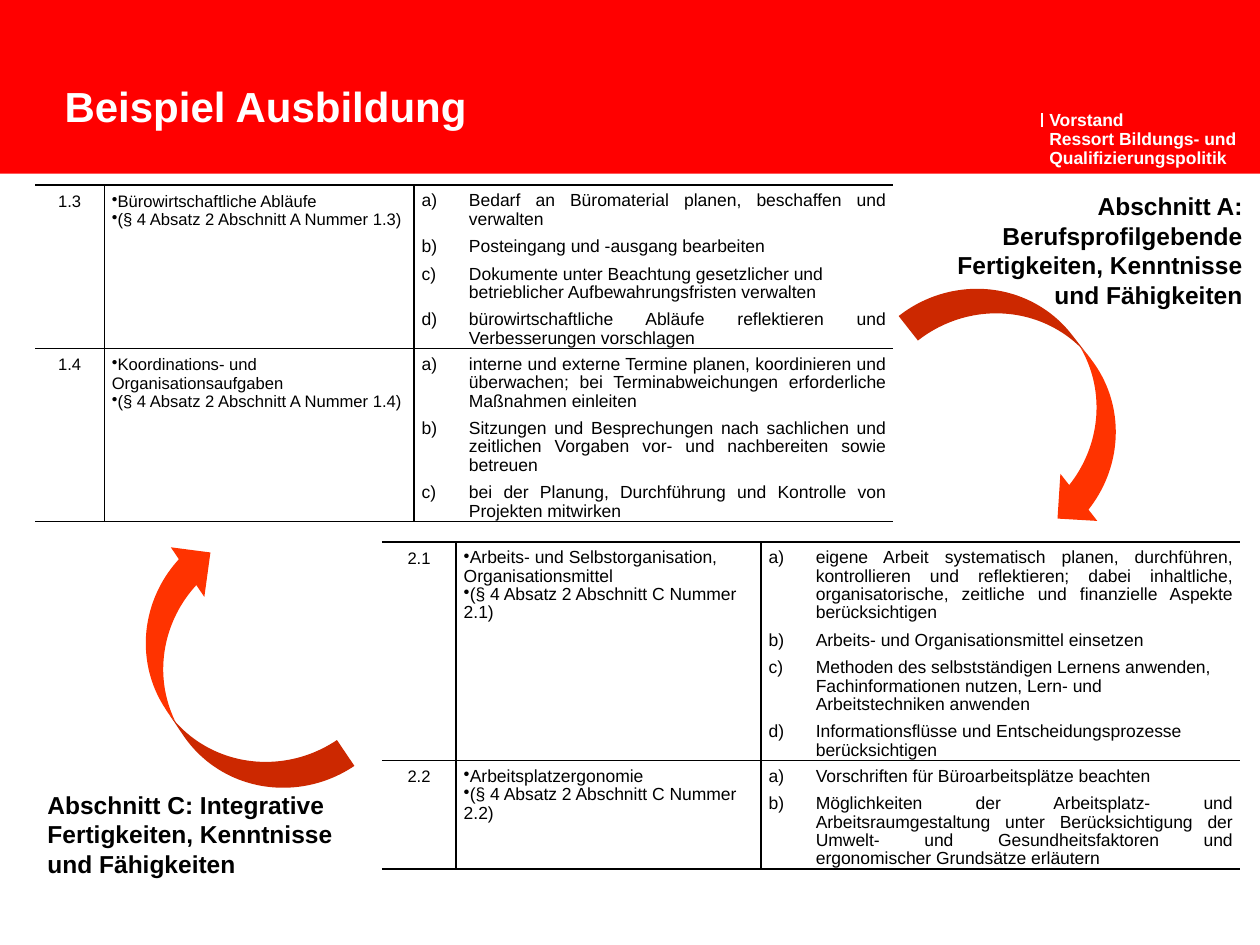
from lxml.etree import SubElement
from pptx import Presentation
from pptx.dml.color import RGBColor
from pptx.enum.shapes import MSO_CONNECTOR, MSO_SHAPE
from pptx.enum.text import PP_ALIGN
from pptx.oxml.ns import qn
from pptx.util import Pt

RED = RGBColor(0xFF, 0x00, 0x00)
ORANGE = RGBColor(0xFF, 0x33, 0x00)
WHITE = RGBColor(0xFF, 0xFF, 0xFF)
BLACK = RGBColor(0x00, 0x00, 0x00)
FONT = "Arial"
LEFT, CENTER, JUSTIFY = PP_ALIGN.LEFT, PP_ALIGN.CENTER, PP_ALIGN.JUSTIFY

SECTION_A = [
    ("1.3", ["Bürowirtschaftliche Abläufe", "(§ 4 Absatz 2 Abschnitt A Nummer 1.3)"], [
        (JUSTIFY, "Bedarf an Büromaterial planen, beschaffen und verwalten"),
        (JUSTIFY, "Posteingang und -ausgang bearbeiten"),
        (LEFT, "Dokumente unter Beachtung gesetzlicher und betrieblicher "
               "Aufbewahrungsfristen verwalten"),
        (JUSTIFY, "bürowirtschaftliche Abläufe reflektieren und Verbesserungen vorschlagen"),
    ]),
    ("1.4", ["Koordinations- und Organisationsaufgaben",
             "(§ 4 Absatz 2 Abschnitt A Nummer 1.4)"], [
        (JUSTIFY, "interne und externe Termine planen, koordinieren und überwachen; "
                  "bei Terminabweichungen erforderliche Maßnahmen einleiten"),
        (JUSTIFY, "Sitzungen und Besprechungen nach sachlichen und zeitlichen Vorgaben "
                  "vor- und nachbereiten sowie betreuen"),
        (JUSTIFY, "bei der Planung, Durchführung und Kontrolle von Projekten mitwirken"),
    ]),
]
SECTION_C = [
    ("2.1", ["Arbeits- und Selbstorganisation, Organisationsmittel",
             "(§ 4 Absatz 2 Abschnitt C Nummer 2.1)"], [
        (JUSTIFY, "eigene Arbeit systematisch planen, durchführen, kontrollieren und "
                  "reflektieren; dabei inhaltliche, organisatorische, zeitliche und "
                  "finanzielle Aspekte berücksichtigen"),
        (JUSTIFY, "Arbeits- und Organisationsmittel einsetzen"),
        (LEFT, "Methoden des selbstständigen Lernens anwenden, Fachinformationen nutzen, "
               "Lern- und Arbeitstechniken anwenden"),
        (LEFT, "Informationsflüsse und Entscheidungsprozesse berücksichtigen"),
    ]),
    ("2.2", ["Arbeitsplatzergonomie", "(§ 4 Absatz 2 Abschnitt C Nummer 2.2)"], [
        (JUSTIFY, "Vorschriften für Büroarbeitsplätze beachten"),
        (JUSTIFY, "Möglichkeiten der Arbeitsplatz- und Arbeitsraumgestaltung unter "
                  "Berücksichtigung der Umwelt- und Gesundheitsfaktoren und ergonomischer "
                  "Grundsätze erläutern"),
    ]),
]


def add_run(paragraph, text, size, color=BLACK, bold=False):
    run = paragraph.add_run()
    run.text = text
    run.font.name = FONT
    run.font.size = Pt(size)
    run.font.bold = bold
    run.font.color.rgb = color


def next_paragraph(frame, index):
    return frame.paragraphs[0] if index == 0 else frame.add_paragraph()


def add_bold_text(slide, box, lines, size, color, align=LEFT, inset=(0, 0), spacing=None):
    frame = slide.shapes.add_textbox(*map(Pt, box)).text_frame
    frame.word_wrap = True
    frame.margin_left = frame.margin_right = Pt(inset[0])
    frame.margin_top = frame.margin_bottom = Pt(inset[1])
    for index, line in enumerate(lines):
        paragraph = next_paragraph(frame, index)
        paragraph.alignment = align
        if spacing:
            paragraph.line_spacing = Pt(spacing)
        add_run(paragraph, line, size, color, bold=True)


def add_header(slide, box):
    left, top, width, height = box
    band = slide.shapes.add_shape(MSO_SHAPE.RECTANGLE, *map(Pt, box))
    band.shadow.inherit = False
    band.fill.solid()
    band.fill.fore_color.rgb = RED
    band.line.fill.background()

    rule_x = left + width - 124.6
    rule = slide.shapes.add_connector(
        MSO_CONNECTOR.STRAIGHT, Pt(rule_x), Pt(top + 64.8), Pt(rule_x), Pt(top + 72.7))
    rule.line.color.rgb = WHITE
    rule.line.width = Pt(0.8)
    SubElement(rule._element.spPr, qn("a:effectLst"))

    add_bold_text(slide, (left + width - 120.4, top + 63.2, 120.4, 33),
                  ["Vorstand", "Ressort Bildungs- und", "Qualifizierungspolitik"],
                  10, WHITE, spacing=11)
    add_bold_text(slide, (left + 36.9, top + 49, 662, 26),
                  ["Beispiel Ausbildung"], 24, WHITE, spacing=26)


def set_borders(cell, visible_sides):
    properties = cell._tc.get_or_add_tcPr()
    for side in "LRTB":
        border = SubElement(properties, qn(f"a:ln{side}"), w=str(Pt(1)))
        if side in visible_sides:
            fill = SubElement(border, qn("a:solidFill"))
            SubElement(fill, qn("a:srgbClr"), val=str(BLACK))
        else:
            SubElement(border, qn("a:noFill"))
    cell.fill.background()


def fill_cell(cell, entries, size, marker=None, hanging=0, after=0):
    cell.margin_left = cell.margin_right = cell.margin_top = Pt(4.3)
    cell.margin_bottom = Pt(0)
    for index, (align, text) in enumerate(entries):
        paragraph = next_paragraph(cell.text_frame, index)
        properties = paragraph._p.get_or_add_pPr()
        properties.set("marL", str(Pt(hanging)))
        properties.set("indent", str(Pt(-hanging)))
        if marker:
            tag, attributes = marker
            SubElement(properties, qn(tag), **attributes)
        paragraph.alignment = align
        paragraph.line_spacing = Pt(10.5)
        paragraph.space_after = Pt(after)
        add_run(paragraph, text, size)


def add_skill_table(slide, box, widths, heights, section, topic_size):
    table = slide.shapes.add_table(len(section), len(widths), *map(Pt, box)).table
    table.first_row = table.horz_banding = False
    for column, width in zip(table.columns, widths):
        column.width = Pt(width)
    for row, height in zip(table.rows, heights):
        row.height = Pt(height)
    bullet = ("a:buChar", {"char": "•"})
    lettering = ("a:buAutoNum", {"type": "alphaLcParenR"})
    for row, (number, topics, skills) in zip(table.rows, section):
        number_cell, topic_cell, skill_cell = row.cells
        fill_cell(number_cell, [(CENTER, number)], 9.5, after=5.2)
        fill_cell(topic_cell, [(LEFT, topic) for topic in topics], topic_size, bullet)
        fill_cell(skill_cell, skills, 10, lettering, hanging=27, after=5.2)
        for cell, sides in zip(row.cells, ("RTB", "LRTB", "LTB")):
            set_borders(cell, sides)


def add_curved_arrow(slide, box, rotation):
    arrow = slide.shapes.add_shape(MSO_SHAPE.CURVED_LEFT_ARROW, *map(Pt, box))
    for index, value in enumerate((0.25, 0.48, 0.24)):
        arrow.adjustments[index] = value
    arrow.rotation = rotation
    arrow.shadow.inherit = False
    arrow.fill.solid()
    arrow.fill.fore_color.rgb = ORANGE
    arrow.line.fill.background()


def add_section_label(slide, box, text, align):
    add_bold_text(slide, box, [text], 14, BLACK, align, inset=(7.2, 3.6))


def main():
    presentation = Presentation()
    presentation.slide_width, presentation.slide_height = Pt(720), Pt(540)
    slide = presentation.slides.add_slide(presentation.slide_layouts[6])

    add_header(slide, (0, 0, 720, 99.2))
    add_skill_table(slide, (20, 105.6, 490.3, 192.4), (39.6, 177.1, 273.6),
                    (93.5, 98.9), SECTION_A, 9.5)
    add_skill_table(slide, (218.2, 309.6, 490.3, 186.9), (42.5, 174.2, 273.6),
                    (124.9, 62), SECTION_C, 10)
    add_curved_arrow(slide, (556.6, 141.1, 71.3, 164.2), 321.9)
    add_curved_arrow(slide, (91.4, 307.4, 71.3, 164.2), 146)
    add_section_label(slide, (20, 447.8, 190, 58.3),
                      "Abschnitt C: Integrative Fertigkeiten, Kenntnisse und Fähigkeiten", LEFT)
    add_section_label(slide, (520.6, 105.8, 196.6, 74.9),
                      "Abschnitt A: Berufsprofilgebende Fertigkeiten, Kenntnisse und Fähigkeiten",
                      PP_ALIGN.RIGHT)
    presentation.save("out.pptx")


if __name__ == "__main__":
    main()
